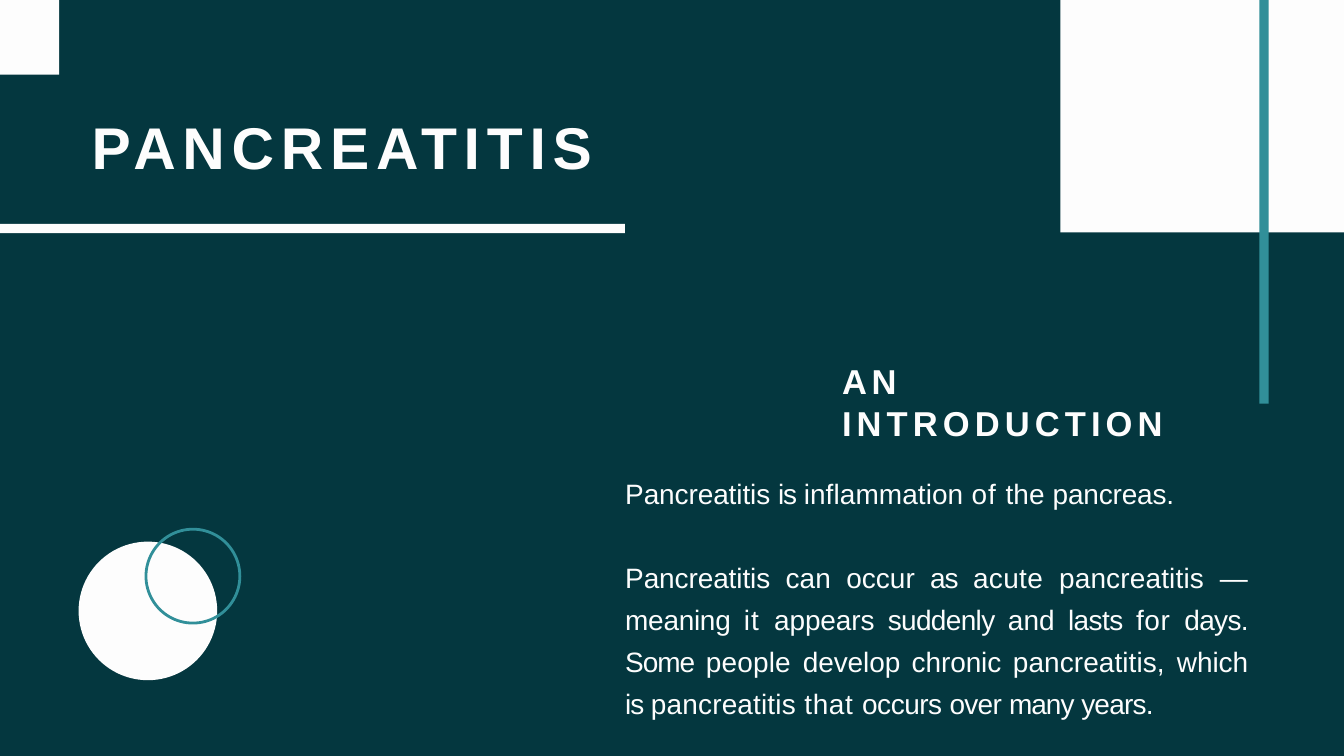
from pptx import Presentation
from pptx.dml.color import RGBColor
from pptx.enum.shapes import MSO_SHAPE as Shape
from pptx.enum.text import PP_ALIGN as Align
from pptx.util import Pt

COLORS = {"ground": "04373F", "white": "FDFDFD", "teal": "318F99"}

DEFINITION = [
    ("Pancreatitis ", -0.1), ("is ", -1.2), ("inflammation ", 0.1),
    ("of ", 1), ("the ", 0.1), ("pancreas.", -0.2),
]
COURSE = [
    ("Pancreatitis ", -0.1), ("can ", 0.1), ("occur ", 0), ("as ", -1.1),
    ("acute ", 0.4), ("pancreatitis ", 0.2), ("— ", 0), ("meaning ", -0.3),
    ("it ", 1), ("appears ", -0.1), ("suddenly ", -0.7), ("and ", 0),
    ("lasts ", -0.6), ("for ", 0.6), ("days. ", -0.7), ("Some ", -1.1),
    ("people ", 0.2), ("develop chronic ", -0.1), ("pancreatitis, ", 0.1),
    ("which ", -0.1), ("is ", -1.2), ("pancreatitis ", 0.2), ("that ", 0.7),
    ("occurs ", -0.5), ("over ", -0.7), ("many ", -1.1), ("years.", -0.8),
]


def color(name):
    return RGBColor.from_string(COLORS[name])


class SlideBuilder:
    font = "Arial"
    ink = "white"

    def __init__(self, page):
        self.page = page

    def background(self, fill):
        self.page.background.fill.solid()
        self.page.background.fill.fore_color.rgb = color(fill)

    def shape(self, kind, left, top, width, height, fill=None, line=None, weight=3):
        shape = self.page.shapes.add_shape(
            kind, Pt(left), Pt(top), Pt(width), Pt(height))
        shape.shadow.inherit = False
        if fill:
            shape.fill.solid()
            shape.fill.fore_color.rgb = color(fill)
        else:
            shape.fill.background()
        if line:
            shape.line.color.rgb = color(line)
            shape.line.width = Pt(weight)
        else:
            shape.line.fill.background()

    def text_frame(self, left, top, width, height):
        box = self.page.shapes.add_textbox(Pt(left), Pt(top), Pt(width), Pt(height))
        frame = box.text_frame
        frame.word_wrap = True
        frame.margin_left = frame.margin_right = frame.margin_bottom = 0
        frame.margin_top = Pt(1)
        return frame

    def paragraph(self, para, spans, size, bold=False, before=1, indent=1,
                  align=Align.LEFT, spacing=None):
        para.alignment = align
        para.space_before = Pt(before)
        para.line_spacing = spacing
        para._p.get_or_add_pPr().set("marL", str(Pt(indent)))
        for text, tracking in spans:
            if text == "\v":
                para.add_line_break()
                continue
            span = para.add_run()
            span.text = text
            span.font.name = self.font
            span.font.size = Pt(size)
            span.font.bold = bold
            span.font.color.rgb = color(self.ink)
            span._r.get_or_add_rPr().set("spc", str(round(tracking * 100)))


def main():
    deck = Presentation()
    deck.slide_width, deck.slide_height = Pt(1440), Pt(810)
    builder = SlideBuilder(deck.slides.add_slide(deck.slide_layouts[6]))
    builder.background("ground")

    body = builder.text_frame(668.9, 385.2, 668.2, 343.4)
    builder.paragraph(body.paragraphs[0],
                      [("AN", 5.2), ("\v", 0), ("INTRODUCTION", 5.5)],
                      size=37, bold=True, indent=233.3)
    builder.paragraph(body.add_paragraph(), DEFINITION, size=30, before=35.8,
                      align=Align.JUSTIFY)
    builder.paragraph(body.add_paragraph(), COURSE, size=30, before=45,
                      align=Align.JUSTIFY, spacing=1.25)

    builder.shape(Shape.OVAL, 84.2, 580.3, 148.5, 148.5, fill="white")
    builder.shape(Shape.OVAL, 156.4, 567, 100.6, 100.6, line="teal")
    builder.shape(Shape.RECTANGLE, 1136.2, 0, 303.8, 249, fill="white")
    builder.shape(Shape.RECTANGLE, 1349.3, 0, 10, 432.6, fill="teal")

    title = builder.text_frame(97.2, 118.1, 556.6, 77.8)
    builder.paragraph(title.paragraphs[0], [("PANCREATITIS", 7.3)], size=63, bold=True)

    builder.shape(Shape.RECTANGLE, 0, 239.8, 669.6, 10, fill="white")
    builder.shape(Shape.RECTANGLE, 0, 0, 63.4, 79.9, fill="white")
    deck.save("out.pptx")


if __name__ == "__main__":
    main()
